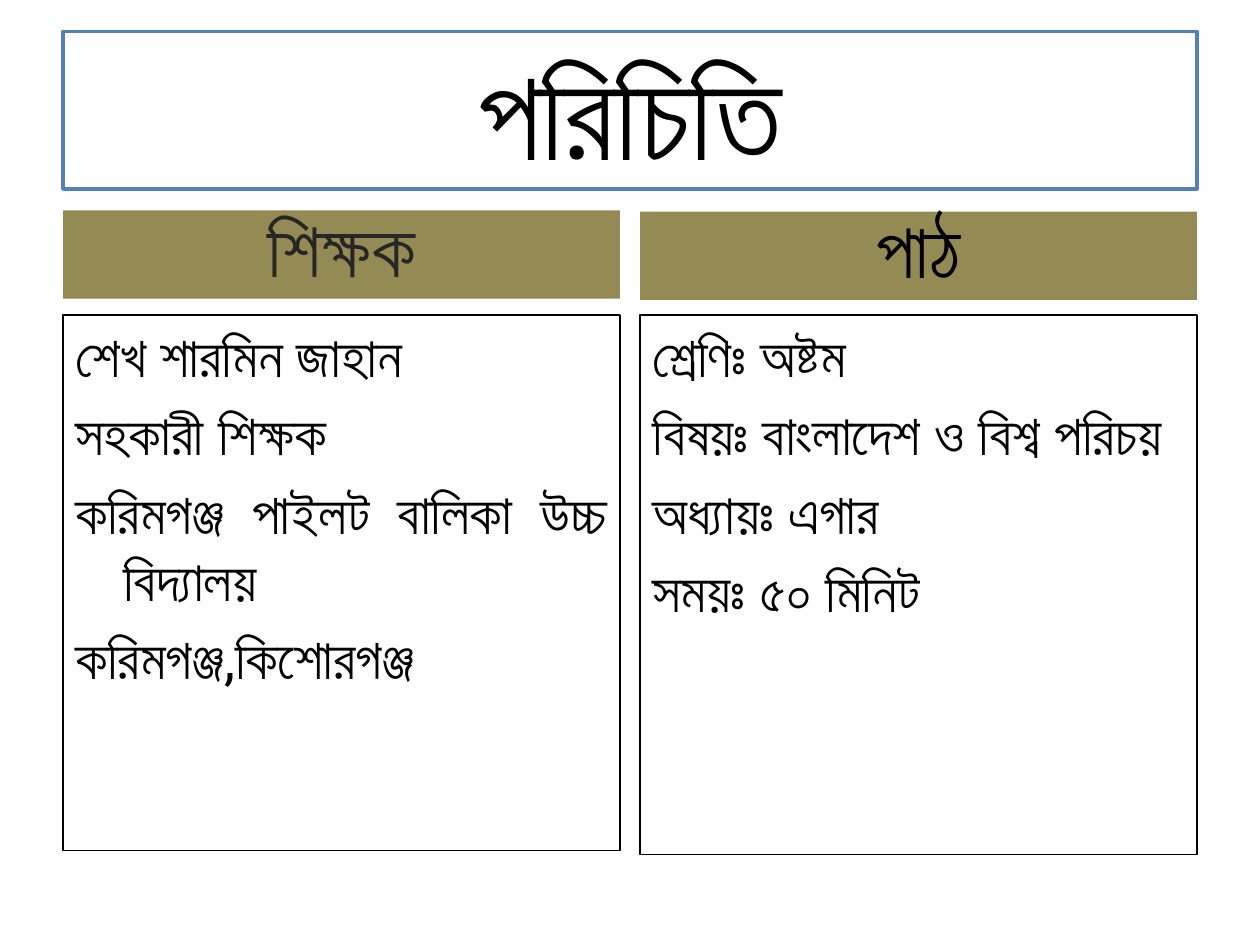
from pptx import Presentation
from pptx.dml.color import RGBColor
from pptx.enum.shapes import MSO_SHAPE as Shape
from pptx.enum.text import MSO_ANCHOR as Anchor, PP_ALIGN as Align
from pptx.util import Inches, Pt

# Content
TITLE = "পরিচিতি"
COLUMNS = [
    {
        "heading": "শিক্ষক",
        "heading_color": "262626",
        "heading_top": 1.67,
        "details_height": 4.25,
        "align": Align.JUSTIFY,
        "details": [
            "শেখ শারমিন জাহান",
            "সহকারী শিক্ষক",
            "করিমগঞ্জ পাইলট বালিকা উচ্চ বিদ্যালয়",
            "করিমগঞ্জ,কিশোরগঞ্জ",
        ],
    },
    {
        "heading": "পাঠ",
        "heading_color": "000000",
        "heading_top": 1.68,
        "details_height": 4.28,
        "align": Align.LEFT,
        "details": [
            "শ্রেণিঃ অষ্টম",
            "বিষয়ঃ বাংলাদেশ ও বিশ্ব পরিচয়",
            "অধ্যায়ঃ এগার",
            "সময়ঃ ৫০ মিনিট",
        ],
    },
]

THEME = {
    "font": "Roboto",
    "white": "FFFFFF", "black": "000000", "blue": "4F81BD", "olive": "948A54",
    "title_size": 72, "heading_size": 44, "details_size": 32,
}

# Layout in inches
SLIDE_W, SLIDE_H = 10, 7.5
MARGIN, GAP = 0.5, 0.16
CONTENT_W = SLIDE_W - 2 * MARGIN
COLUMN_W = (CONTENT_W - GAP) / 2
HANGING = 0.38


def add_panel(slide, box, lines, size, color=THEME["black"], fill=None,
              border=None, anchor=Anchor.TOP, align=Align.CENTER,
              bold=False, hanging=0):
    panel = slide.shapes.add_shape(Shape.RECTANGLE, *map(Inches, box))
    panel.shadow.inherit = False
    if fill:
        panel.fill.solid()
        panel.fill.fore_color.rgb = RGBColor.from_string(fill)
    else:
        panel.fill.background()
    if border:
        border_color, border_width = border
        panel.line.color.rgb = RGBColor.from_string(border_color)
        panel.line.width = Pt(border_width)
    else:
        panel.line.fill.background()

    frame = panel.text_frame
    frame.word_wrap = True
    frame.vertical_anchor = anchor
    frame.text = "\n".join(lines)
    for index, paragraph in enumerate(frame.paragraphs):
        paragraph.alignment = align
        if index:
            paragraph.space_before = Pt(size * 0.2)
        if hanging:
            properties = paragraph._p.get_or_add_pPr()
            properties.set("marL", str(Inches(hanging)))
            properties.set("indent", str(Inches(-hanging)))
        for run in paragraph.runs:
            run.font.name = THEME["font"]
            run.font.size = Pt(size)
            run.font.bold = bold
            run.font.color.rgb = RGBColor.from_string(color)


def main():
    deck = Presentation()
    deck.slide_width, deck.slide_height = Inches(SLIDE_W), Inches(SLIDE_H)
    slide = deck.slides.add_slide(deck.slide_layouts[6])

    # Title
    add_panel(slide, (MARGIN, 0.25, CONTENT_W, 1.25), [TITLE],
              THEME["title_size"], fill=THEME["white"],
              border=(THEME["blue"], 2), anchor=Anchor.MIDDLE)

    # Teacher and lesson columns
    for index, column in enumerate(COLUMNS):
        left = MARGIN + index * (COLUMN_W + GAP)
        add_panel(slide, (left, column["heading_top"], COLUMN_W, 0.7),
                  [column["heading"]], THEME["heading_size"],
                  color=column["heading_color"], fill=THEME["olive"],
                  anchor=Anchor.BOTTOM, bold=True)
        add_panel(slide, (left, 2.5, COLUMN_W, column["details_height"]),
                  column["details"], THEME["details_size"],
                  border=(THEME["black"], 0.75), align=column["align"],
                  hanging=HANGING)

    deck.save("out.pptx")


if __name__ == "__main__":
    main()
